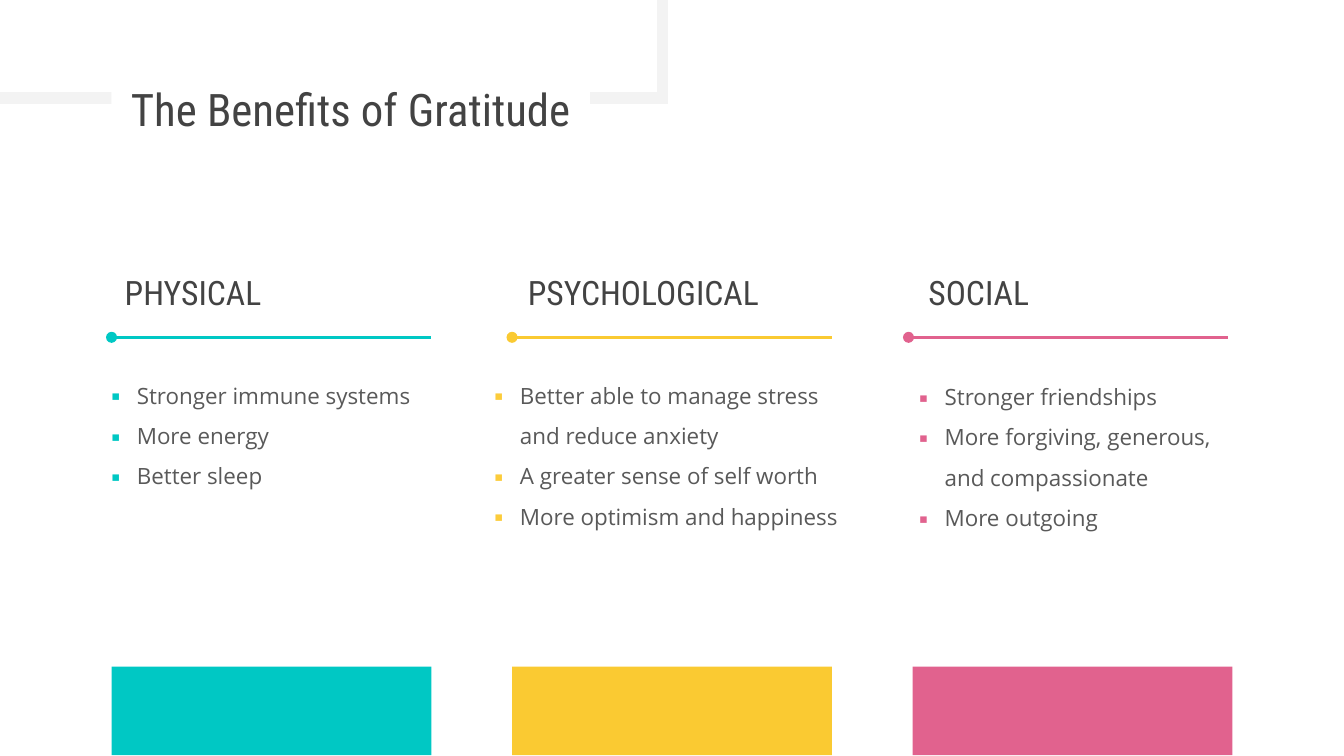
from dataclasses import dataclass

from lxml import etree
from pptx import Presentation
from pptx.dml.color import RGBColor
from pptx.enum.shapes import MSO_CONNECTOR, MSO_SHAPE
from pptx.enum.text import MSO_ANCHOR, PP_ALIGN
from pptx.oxml.ns import qn
from pptx.slide import Slide
from pptx.util import Inches, Pt

RECT = MSO_SHAPE.RECTANGLE
LINE = MSO_CONNECTOR.STRAIGHT
TOP, MIDDLE = MSO_ANCHOR.TOP, MSO_ANCHOR.MIDDLE
LEFT, CENTER = PP_ALIGN.LEFT, PP_ALIGN.CENTER

WHITE = RGBColor(0xFF, 0xFF, 0xFF)
PALE = RGBColor(0xF3, 0xF3, 0xF3)
DARK = RGBColor(0x43, 0x43, 0x43)
GRAY = RGBColor(0x59, 0x59, 0x59)
TEAL = RGBColor(0x00, 0xC8, 0xC4)
GOLD = RGBColor(0xFA, 0xCA, 0x32)
AMBER = RGBColor(0xFC, 0xCC, 0x3B)
PINK = RGBColor(0xE1, 0x62, 0x8E)

HEAD_FONT = "Roboto Condensed"
BODY_FONT = "Open Sans"
START, STEP, WIDTH = 0.83, 2.98, 2.38
INDENT = Inches(0.19)

Box = tuple[float, float, float, float]


@dataclass
class Column:
    title: str
    items: list[str]
    color: RGBColor
    mark: RGBColor
    head: Box
    rule: float
    body: Box


COLUMNS = [
    Column("PHYSICAL", ["Stronger immune systems", "More energy", "Better sleep"],
           TEAL, TEAL, (0.83, 1.96, 2.43, 0.42), 0.83, (0.73, 2.64, 2.53, 1.71)),
    Column("PSYCHOLOGICAL",
           ["Better able to manage stress and reduce anxiety",
            "A greater sense of self worth", "More optimism and happiness"],
           GOLD, AMBER, (3.83, 1.96, 2.36, 0.42), 3.81, (3.58, 2.64, 2.88, 1.71)),
    Column("SOCIAL",
           ["Stronger friendships", "More forgiving, generous, and compassionate",
            "More outgoing"],
           PINK, PINK, (6.81, 1.96, 2.36, 0.42), 6.76, (6.74, 2.65, 2.56, 1.71)),
]


def add_rect(slide: Slide, box: Box, fill: RGBColor | None = None,
             line: RGBColor | None = None):
    shape = slide.shapes.add_shape(RECT, *map(Inches, box))
    shape.shadow.inherit = False
    if fill is None:
        shape.fill.background()
    else:
        shape.fill.solid()
        shape.fill.fore_color.rgb = fill
    if line is None:
        shape.line.fill.background()
    else:
        shape.line.color.rgb = line
        shape.line.width = Pt(6)
        edge = shape._element.spPr.find(qn("a:ln"))
        etree.SubElement(edge, qn("a:miter"), lim="800000")
    return shape


def add_bullet(para, color: RGBColor) -> None:
    props = para._p.get_or_add_pPr()
    props.set("marL", str(INDENT))
    props.set("indent", str(-INDENT))
    tint = etree.SubElement(props, qn("a:buClr"))
    etree.SubElement(tint, qn("a:srgbClr"), val=str(color))
    etree.SubElement(props, qn("a:buFont"), typeface=BODY_FONT)
    etree.SubElement(props, qn("a:buChar"), char="▪")


def add_text(slide: Slide, box: Box, lines: list[str], *, size: int, font: str,
             color: RGBColor, space: float = 1.0, align=LEFT, anchor=TOP,
             mark: RGBColor | None = None, fill: RGBColor | None = None) -> None:
    if fill is None:
        shape = slide.shapes.add_textbox(*map(Inches, box))
    else:
        shape = add_rect(slide, box, fill)
    frame = shape.text_frame
    frame.word_wrap = True
    frame.vertical_anchor = anchor
    frame.margin_left = frame.margin_right = Inches(0.1)
    frame.margin_top = frame.margin_bottom = Inches(0.1)
    for index, text in enumerate(lines):
        para = frame.add_paragraph() if index else frame.paragraphs[0]
        para.alignment = align
        para.line_spacing = space
        if mark is not None:
            add_bullet(para, mark)
        run = para.add_run()
        run.text = text
        run.font.size = Pt(size)
        run.font.name = font
        run.font.color.rgb = color


def add_rule(slide: Slide, left: float, color: RGBColor) -> None:
    top = Inches(2.51)
    rule = slide.shapes.add_connector(LINE, Inches(left), top,
                                      Inches(left + WIDTH), top)
    rule.line.color.rgb = color
    rule.line.width = Pt(1.5)
    props = rule._element.spPr
    etree.SubElement(props.find(qn("a:ln")), qn("a:headEnd"), type="oval")
    etree.SubElement(props, qn("a:effectLst"))


def add_column(slide: Slide, col: Column) -> None:
    add_text(slide, col.head, [col.title], size=18, font=HEAD_FONT, color=DARK,
             anchor=MIDDLE)
    add_rule(slide, col.rule, col.color)
    add_text(slide, col.body, col.items, size=12, font=BODY_FONT, color=GRAY,
             space=1.5, mark=col.mark)


def main() -> None:
    """Build the slide on the benefits of gratitude."""
    deck = Presentation()
    deck.slide_width = Inches(10)
    deck.slide_height = deck.slide_width * 9 // 16
    slide = deck.slides.add_slide(deck.slide_layouts[6])
    add_rect(slide, (-0.09, -0.25, 5.02, 0.98), line=PALE)
    for index, col in enumerate(COLUMNS):
        add_rect(slide, (START + index * STEP, 4.96, WIDTH, 0.66), col.color)
    add_text(slide, (0.83, 0.45, 3.56, 0.6), ["The Benefits of Gratitude"],
             size=24, font=HEAD_FONT, color=DARK, space=1.15, align=CENTER,
             fill=WHITE)
    for col in COLUMNS:
        add_column(slide, col)
    deck.save("out.pptx")


if __name__ == "__main__":
    main()
